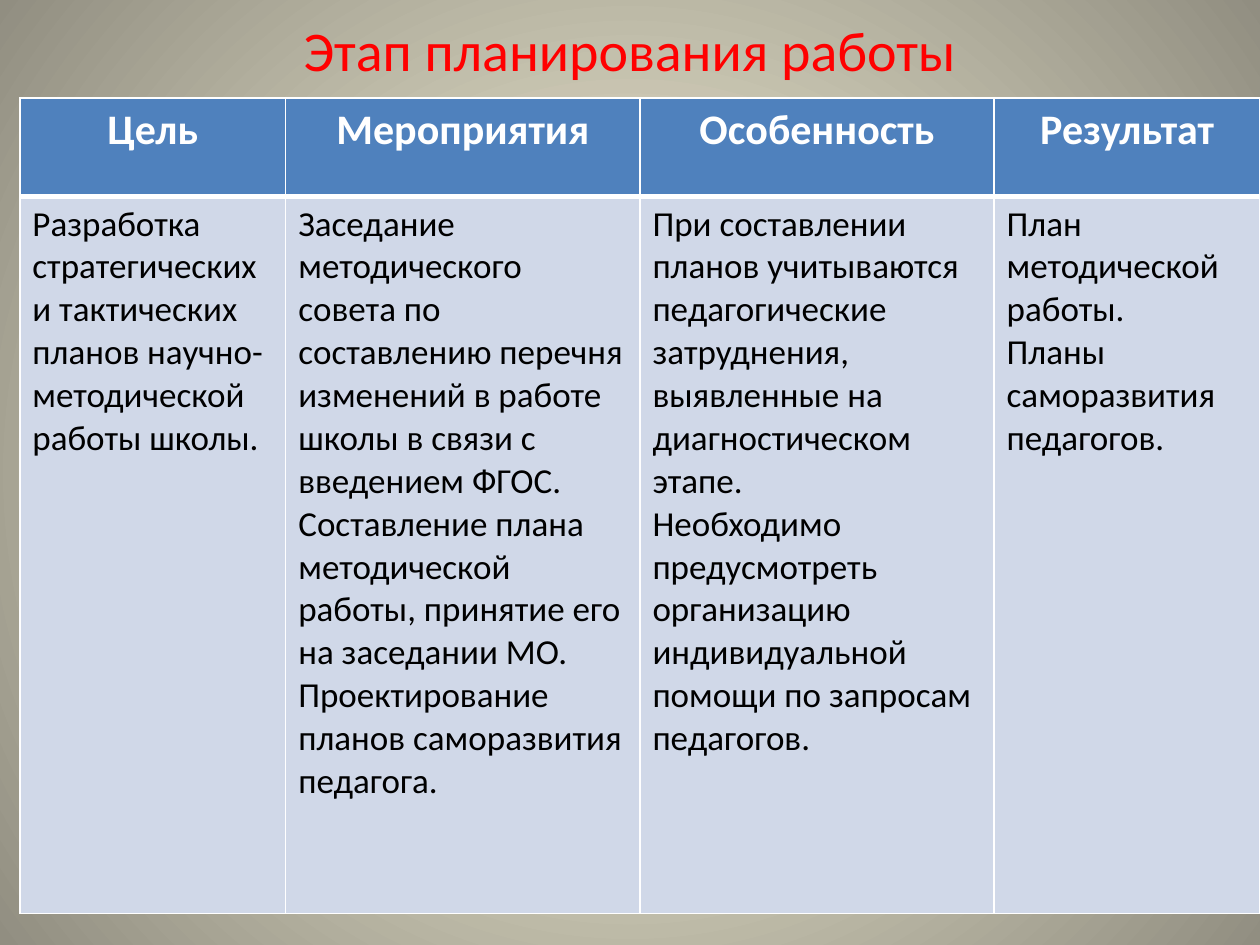
from dataclasses import dataclass

from lxml import etree
from pptx import Presentation
from pptx.dml.color import RGBColor
from pptx.enum.text import MSO_ANCHOR, PP_ALIGN
from pptx.oxml.ns import qn
from pptx.util import Cm, Pt

CENTER, LEFT = PP_ALIGN.CENTER, PP_ALIGN.LEFT
MIDDLE = MSO_ANCHOR.MIDDLE
TITLE_ONLY = 5


@dataclass(frozen=True)
class Theme:
    font: str = "Calibri"
    title: str = "FF0000"
    header_fill: str = "4F81BD"
    header_text: str = "FFFFFF"
    body_fill: str = "D0D8E8"
    body_text: str = "000000"
    border: str = "FFFFFF"
    bg_center: str = "FCF7DD"
    bg_edge: str = "918E81"
    title_size: int = 32
    header_size: int = 24
    body_size: int = 20
    thin: int = 1
    thick: int = 3


THEME = Theme()

TITLE = "Этап планирования работы"
# Heading, column width in cm, paragraphs
COLUMNS = [
    ("Цель", 5.36, [
        "Разработка стратегических и тактических планов "
        "научно-методической работы школы.",
    ]),
    ("Мероприятия", 7.14, [
        "Заседание методического совета по составлению перечня изменений "
        "в работе школы в связи с введением ФГОС. Составление плана "
        "методической работы, принятие его на заседании МО.",
        "Проектирование планов саморазвития педагога.",
    ]),
    ("Особенность", 7.14, [
        "При составлении планов учитываются педагогические затруднения, "
        "выявленные на диагностическом этапе.",
        "Необходимо предусмотреть организацию индивидуальной помощи "
        "по запросам педагогов.",
    ]),
    ("Результат", 5.36, [
        "План методической работы.",
        "Планы саморазвития педагогов.",
    ]),
]
ROW_HEIGHTS = (1.98, 14.45)


def set_background(slide):
    """Fill the slide with a circular gradient, light in the middle."""
    fill = slide.background.fill
    fill.gradient()
    for stop, color in zip(fill.gradient_stops, (THEME.bg_center, THEME.bg_edge)):
        stop.color.rgb = RGBColor.from_string(color)
    grad = slide.element.find(".//" + qn("a:gradFill"))
    grad.remove(grad.find(qn("a:lin")))
    path = etree.SubElement(grad, qn("a:path"), path="circle")
    etree.SubElement(path, qn("a:fillToRect"),
                     dict.fromkeys("ltrb", "50000"))


def write_text(tf, paragraphs, size, color, bold=False, align=LEFT):
    font = {"name": THEME.font, "size": Pt(size), "bold": bold}
    for i, text in enumerate(paragraphs):
        p = tf.paragraphs[0] if i == 0 else tf.add_paragraph()
        p.alignment = align
        r = p.add_run()
        r.text = text
        for name, value in font.items():
            setattr(r.font, name, value)
        r.font.color.rgb = RGBColor.from_string(color)


def add_title(slide):
    sp = slide.shapes.title
    box = {"left": Cm(1.27), "top": Cm(0), "width": Cm(22.86), "height": Cm(1.98)}
    for name, value in box.items():
        setattr(sp, name, value)
    tf = sp.text_frame
    tf.word_wrap = True
    tf.vertical_anchor = MIDDLE
    write_text(tf, [TITLE], THEME.title_size, THEME.title, align=CENTER)


def set_borders(cell, **widths):
    """Draw the sides L, R, T and B in the widths given in points."""
    tc_pr = cell._tc.get_or_add_tcPr()
    for i, side in enumerate("LRTB"):
        ln = etree.Element(qn("a:ln" + side),
                           w=str(Pt(widths.get(side, THEME.thin))))
        fill = etree.SubElement(ln, qn("a:solidFill"))
        etree.SubElement(fill, qn("a:srgbClr"), val=THEME.border)
        tc_pr.insert(i, ln)


def format_cell(cell, color, **borders):
    cell.fill.solid()
    cell.fill.fore_color.rgb = RGBColor.from_string(color)
    set_borders(cell, **borders)


def add_plan_table(slide):
    width = sum(w for _, w, _ in COLUMNS)
    table = slide.shapes.add_table(
        len(ROW_HEIGHTS), len(COLUMNS), Cm(0.4), Cm(1.98),
        Cm(width), Cm(sum(ROW_HEIGHTS))).table
    for row, height in zip(table.rows, ROW_HEIGHTS):
        row.height = Cm(height)
    for i, (heading, col_width, paragraphs) in enumerate(COLUMNS):
        table.columns[i].width = Cm(col_width)
        header, body = table.cell(0, i), table.cell(1, i)
        format_cell(header, THEME.header_fill, B=THEME.thick)
        format_cell(body, THEME.body_fill, T=THEME.thick)
        write_text(header.text_frame, [heading], THEME.header_size,
                   THEME.header_text, bold=True, align=CENTER)
        write_text(body.text_frame, paragraphs, THEME.body_size, THEME.body_text)


def main():
    prs = Presentation()
    prs.slide_width, prs.slide_height = Cm(25.4), Cm(19.05)
    slide = prs.slides.add_slide(prs.slide_layouts[TITLE_ONLY])
    set_background(slide)
    add_title(slide)
    add_plan_table(slide)
    prs.save("out.pptx")


if __name__ == "__main__":
    main()
